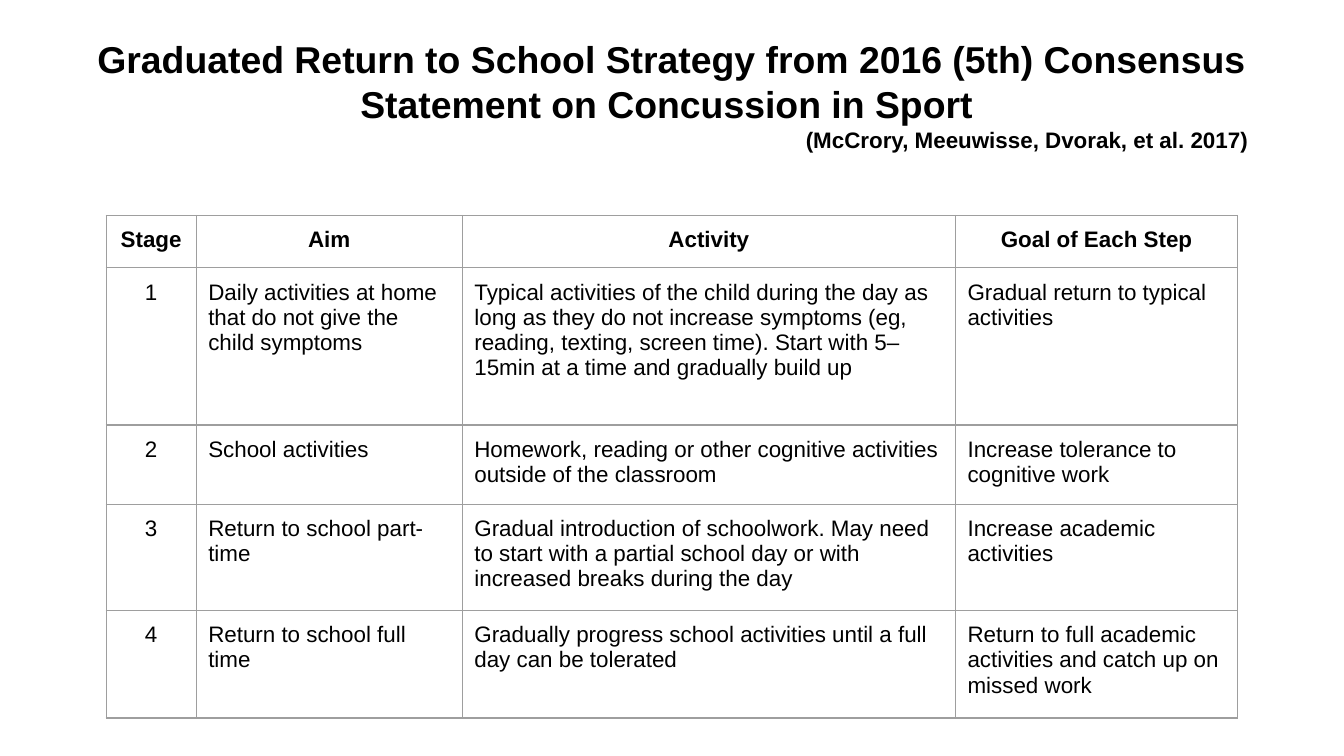
from dataclasses import dataclass

from lxml import etree
from pptx import Presentation
from pptx.dml.color import RGBColor
from pptx.enum import text
from pptx.oxml import ns
from pptx import util as u

WIDE = 10
HIGH = WIDE * 9 / 16
BLACK, WHITE, GREY = "000000", "FFFFFF", "9E9E9E"
CENTER, LEFT, RIGHT = text.PP_ALIGN.CENTER, text.PP_ALIGN.LEFT, text.PP_ALIGN.RIGHT


@dataclass
class Stage:
    num: str
    aim: str
    act: str
    goal: str
    high: float  # row height in inches
    bold: bool = False

    def cells(self) -> list[str]:
        return [self.num, self.aim, self.act, self.goal]


COLS = [0.67, 1.98, 3.67, 2.1]
STAGES = [
    Stage("Stage", "Aim", "Activity", "Goal of Each Step", 0.39, True),
    Stage("1", "Daily activities at home that do not give the child symptoms",
          "Typical activities of the child during the day as long as they do not "
          "increase symptoms (eg, reading, texting, screen time). Start with "
          "5–15min at a time and gradually build up",
          "Gradual return to typical activities", 1.17),
    Stage("2", "School activities",
          "Homework, reading or other cognitive activities outside of the classroom",
          "Increase tolerance to cognitive work", 0.59),
    Stage("3", "Return to school part-time",
          "Gradual introduction of schoolwork. May need to start with a partial "
          "school day or with increased breaks during the day",
          "Increase academic activities", 0.79),
    Stage("4", "Return to school full time",
          "Gradually progress school activities until a full day can be tolerated",
          "Return to full academic activities and catch up on missed work", 0.8),
]


def color(code: str) -> RGBColor:
    return RGBColor.from_string(code)


def write(para, words: str, size: float, bold: bool, align) -> None:
    para.alignment = align
    run = para.add_run()
    run.text = words
    font = run.font
    font.name, font.size, font.bold = "Arial", u.Pt(size), bold
    font.color.rgb = color(BLACK)


def inset(item, side: float, edge: float) -> None:
    item.margin_left = item.margin_right = u.Inches(side)
    item.margin_top = item.margin_bottom = u.Inches(edge)


def border(cell, code: str, points: float) -> None:
    props = cell._tc.get_or_add_tcPr()
    for spot, side in enumerate(("lnL", "lnR", "lnT", "lnB")):
        line = etree.Element(ns.qn(f"a:{side}"), w=str(u.Pt(points)))
        fill = etree.SubElement(line, ns.qn("a:solidFill"))
        etree.SubElement(fill, ns.qn("a:srgbClr"), val=code)
        props.insert(spot, line)


# Title with the citation under it, flush right
def head(slide) -> None:
    title = slide.shapes.title
    title.left, title.top = u.Inches(0.034 * WIDE), u.Inches(0.03 * HIGH)
    title.width, title.height = u.Inches(0.932 * WIDE), u.Inches(0.112 * HIGH)
    frame = title.text_frame
    frame.word_wrap = True
    frame.auto_size = text.MSO_AUTO_SIZE.NONE
    frame.vertical_anchor = text.MSO_ANCHOR.TOP
    inset(frame, 0.37, 0.1)
    write(frame.paragraphs[0], "Graduated Return to School Strategy from 2016 (5th) "
          "Consensus Statement on Concussion in Sport ", 20, True, CENTER)
    write(frame.add_paragraph(), "(McCrory, Meeuwisse, Dvorak, et al. 2017)",
          12, True, RIGHT)


# Table of stages
def grid(slide) -> None:
    table = slide.shapes.add_table(
        len(STAGES), len(COLS), u.Inches(0.079 * WIDE), u.Inches(0.285 * HIGH),
        u.Inches(sum(COLS)), u.Inches(sum(s.high for s in STAGES))).table
    table.first_row = table.horz_banding = False
    for col, wide in zip(table.columns, COLS):
        col.width = u.Inches(wide)
    for row, stage in zip(table.rows, STAGES):
        row.height = u.Inches(stage.high)
        for spot, (cell, words) in enumerate(zip(row.cells, stage.cells())):
            inset(cell, 0.09, 0.09)
            cell.fill.solid()
            cell.fill.fore_color.rgb = color(WHITE)
            border(cell, GREY, 0.75)
            align = CENTER if stage.bold or spot == 0 else LEFT
            write(cell.text_frame.paragraphs[0], words, 12, stage.bold, align)


def main() -> None:
    deck = Presentation()
    deck.slide_width, deck.slide_height = u.Inches(WIDE), u.Inches(HIGH)
    slide = deck.slides.add_slide(deck.slide_layouts[5])  # title only
    head(slide)
    grid(slide)
    deck.save("out.pptx")


if __name__ == "__main__":
    main()
